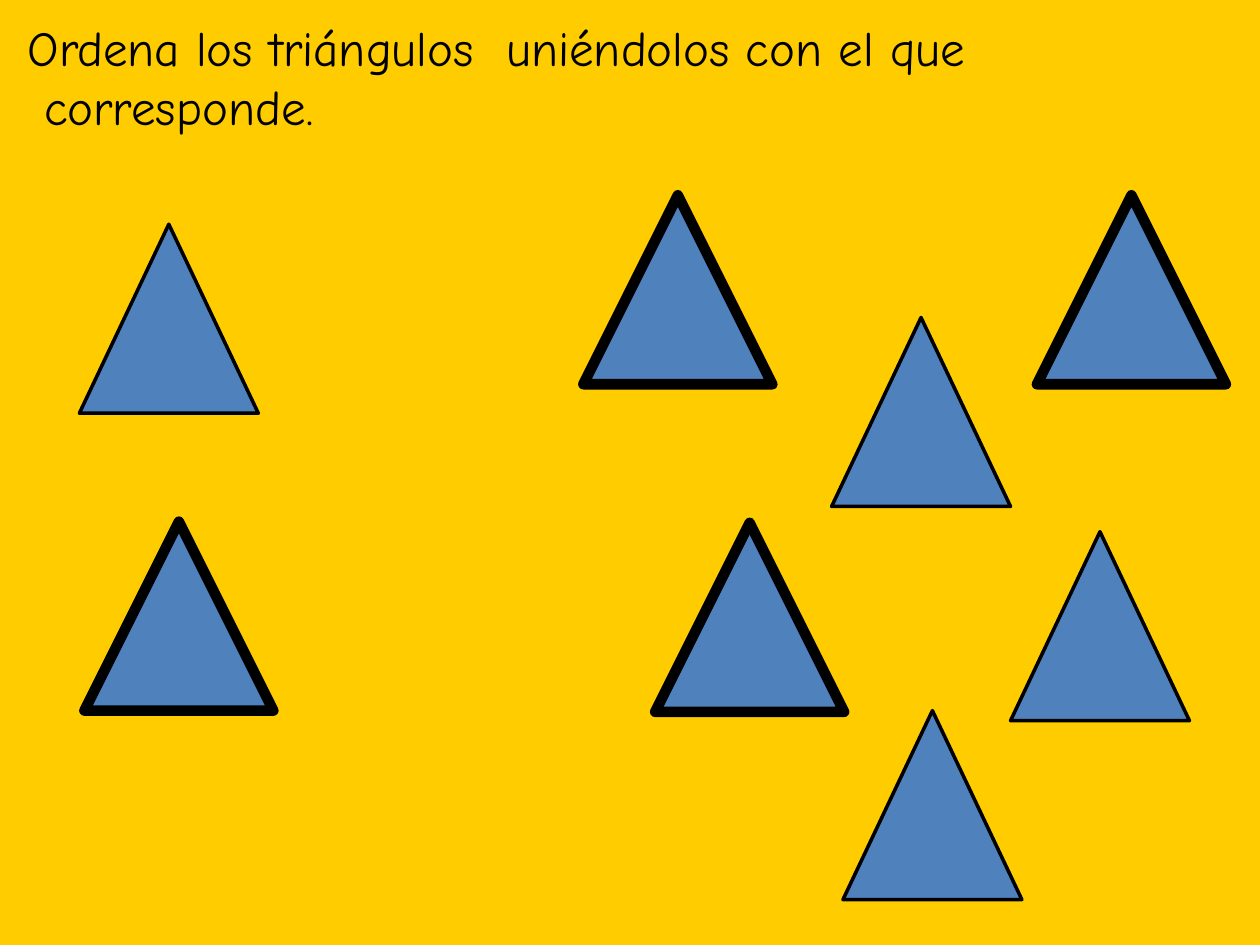
from pptx import Presentation
from pptx.dml.color import RGBColor
from pptx.enum import shapes, text
from pptx.util import Inches, Pt

YELLOW = RGBColor(0xFF, 0xCC, 0x00)
BLUE = RGBColor(0x4F, 0x81, 0xBD)
BLACK = RGBColor(0, 0, 0)

# Outline style: width and height in inches, line width in points
THIN = (1.42, 1.5, 2)
THICK = (1.5, 1.5, 6)

# Triangles to match, offset from the left column's corner
MODELS = [(0, 0, THIN), (0.04, 2.36, THICK)]
# Triangles to choose from, offset from the right area's corner, back to front
CHOICES = [
    (2.06, 4.09, THIN),
    (0.57, 2.6, THICK),
    (3.39, 2.67, THIN),
    (3.6, 0, THICK),
    (1.97, 0.97, THIN),
    (0, 0, THICK),
]


def add_instruction(page, left, top, width, height):
    title = page.shapes.title
    title.left, title.top = Inches(left), Inches(top)
    title.width, title.height = Inches(width), Inches(height)
    frame = title.text_frame
    frame.word_wrap = True
    frame.auto_size = text.MSO_AUTO_SIZE.SHAPE_TO_FIT_TEXT
    frame.vertical_anchor = text.MSO_ANCHOR.TOP
    frame.text = "Ordena los triángulos  uniéndolos con el que\n corresponde"
    for para in frame.paragraphs:
        para.alignment = text.PP_ALIGN.LEFT
        para.font.name = "Comic Neue"
        para.font.size = Pt(28)
        para.font.color.rgb = BLACK
    for para in frame.paragraphs:
        for span in para.runs:
            span.font.name = "Comic Neue"
            span.font.size = Pt(28)
            span.font.color.rgb = BLACK
    stop = frame.paragraphs[-1].add_run()
    stop.text = "."
    stop.font.name = "Calibri"
    stop.font.size = Pt(18)
    stop.font.color.rgb = BLACK


def add_triangles(page, left, top, triangles):
    """Place triangles at their offsets from the corner (left, top)."""
    for across, down, (width, height, weight) in triangles:
        triangle = page.shapes.add_shape(
            shapes.MSO_SHAPE.ISOSCELES_TRIANGLE,
            Inches(left + across), Inches(top + down),
            Inches(width), Inches(height))
        triangle.shadow.inherit = False
        triangle.fill.solid()
        triangle.fill.fore_color.rgb = BLUE
        triangle.line.color.rgb = BLACK
        triangle.line.width = Pt(weight)


def main():
    deck = Presentation()
    deck.slide_width, deck.slide_height = Inches(10), Inches(7.5)
    page = deck.slides.add_slide(deck.slide_layouts.get_by_name("Title Only"))
    page.background.fill.solid()
    page.background.fill.fore_color.rgb = YELLOW
    add_instruction(page, 0.12, 0.09, 8.86, 1.04)
    add_triangles(page, 4.63, 1.55, CHOICES)
    add_triangles(page, 0.63, 1.78, MODELS)
    deck.save("out.pptx")


if __name__ == "__main__":
    main()
